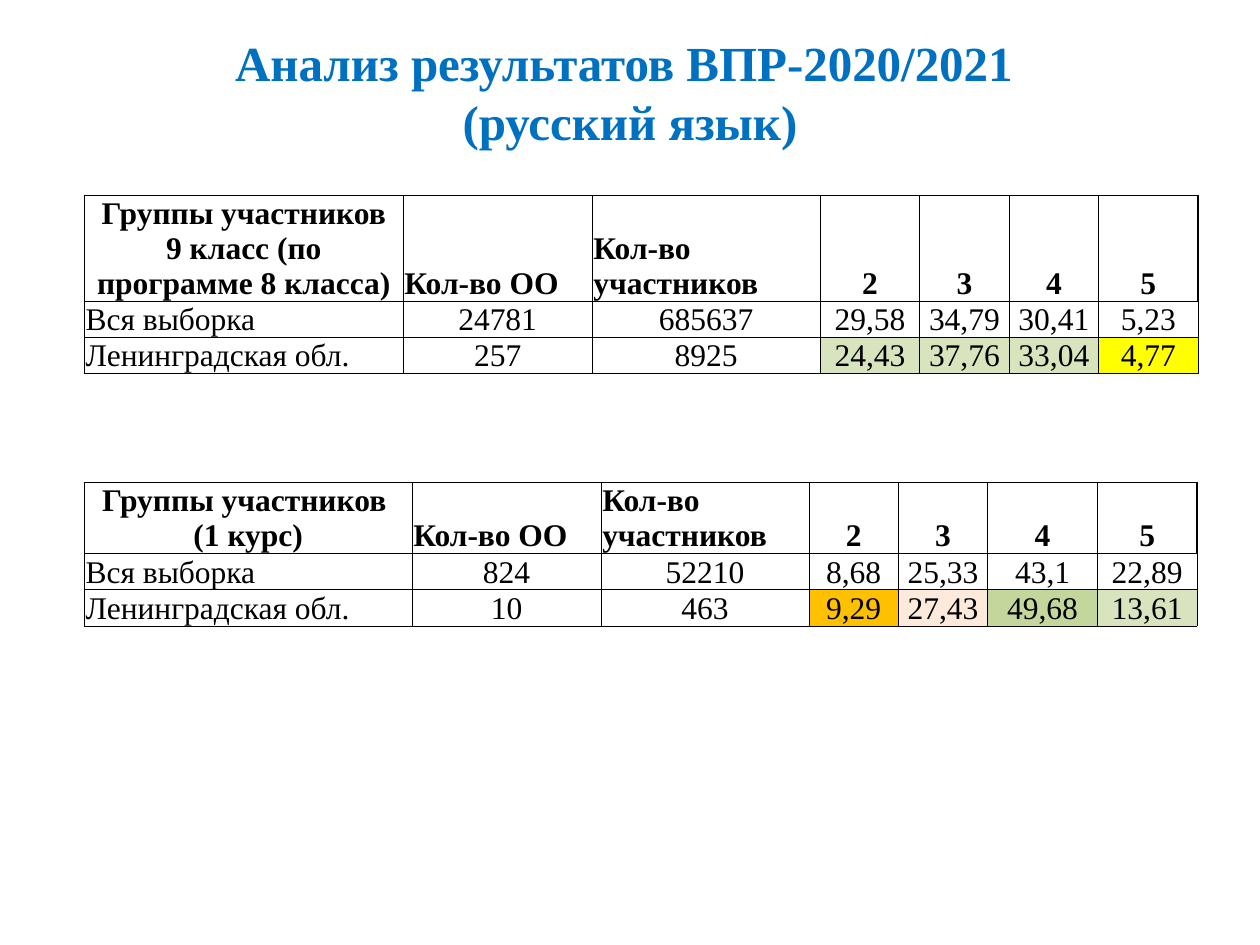
from dataclasses import dataclass, field

from lxml import etree
from pptx import Presentation
from pptx.dml.color import RGBColor
from pptx.enum import text
from pptx.oxml import ns
from pptx.util import Inches, Pt

FONT = "Times New Roman"
BLUE = RGBColor(0x00, 0x70, 0xC0)
BLACK = RGBColor(0x00, 0x00, 0x00)
ORANGE = RGBColor(0xFF, 0xC0, 0x00)
PEACH = RGBColor(0xFD, 0xEA, 0xDA)
GREEN = RGBColor(0xC3, 0xD6, 0x9B)
PALE_GREEN = RGBColor(0xD7, 0xE4, 0xBD)
YELLOW = RGBColor(0xFF, 0xFF, 0x00)

LEFT = 0.67
LINE_HEIGHT = 0.28
CENTER = text.PP_ALIGN.CENTER
HEADINGS = ["Кол-во ОО", "Кол-во участников", "2", "3", "4", "5"]


@dataclass
class ResultTable:
    top: float
    group: list[str]
    header_lines: int
    widths: list[float]
    sample: list[str]
    region: list[str]
    region_fills: list[RGBColor] = field(default_factory=list)


RESULTS = [
    ResultTable(
        top=3.83,
        group=["Группы участников ", "(1 курс)"],
        header_lines=2,
        widths=[2.6, 1.5, 1.65, 0.71, 0.71, 0.87, 0.79],
        sample=["824", "52210", "8,68", "25,33", "43,1", "22,89"],
        region=["10", "463", "9,29", "27,43", "49,68", "13,61"],
        region_fills=[ORANGE, PEACH, GREEN, PALE_GREEN],
    ),
    ResultTable(
        top=1.55,
        group=["Группы участников", "9 класс (по программе 8 класса)"],
        header_lines=3,
        widths=[2.53, 1.5, 1.81, 0.79, 0.71, 0.71, 0.79],
        sample=["24781", "685637", "29,58", "34,79", "30,41", "5,23"],
        region=["257", "8925", "24,43", "37,76", "33,04", "4,77"],
        region_fills=[PALE_GREEN, PALE_GREEN, PALE_GREEN, YELLOW],
    ),
]


def add_span(para, words: str, size: float, color: RGBColor, bold: bool) -> None:
    span = para.add_run()
    span.text = words
    span.font.name = FONT
    span.font.size = Pt(size)
    span.font.bold = bold
    span.font.color.rgb = color


def set_borders(cell, left: float = 0.5, right: float = 0.5) -> None:
    properties = cell._tc.get_or_add_tcPr()
    widths = {"a:lnL": left, "a:lnR": right, "a:lnT": 0.5, "a:lnB": 0.5}
    for position, (tag, width) in enumerate(widths.items()):
        line = etree.Element(ns.qn(tag), w=str(Pt(width)))
        fill = etree.SubElement(line, ns.qn("a:solidFill"))
        etree.SubElement(fill, ns.qn("a:srgbClr"), val=str(BLACK))
        properties.insert(position, line)


def fill_cell(cell, lines: list[str], bold: bool, centered: bool) -> None:
    cell.vertical_anchor = text.MSO_ANCHOR.BOTTOM
    cell.margin_left = cell.margin_right = cell.margin_top = Inches(0.01)
    cell.margin_bottom = 0
    cell.fill.background()
    frame = cell.text_frame
    for index, words in enumerate(lines):
        para = frame.add_paragraph() if index else frame.paragraphs[0]
        para.alignment = CENTER if centered else text.PP_ALIGN.LEFT
        add_span(para, words, 18, BLACK, bold)


def draw_results(page, results: ResultTable) -> None:
    rows = [
        [results.group] + [[heading] for heading in HEADINGS],
        [["Вся выборка"]] + [[value] for value in results.sample],
        [["Ленинградская обл."]] + [[value] for value in results.region],
    ]
    heights = [LINE_HEIGHT * results.header_lines, LINE_HEIGHT, LINE_HEIGHT]
    last = len(results.widths) - 1
    table = page.shapes.add_table(
        len(rows), len(results.widths), Inches(LEFT), Inches(results.top),
        Inches(sum(results.widths)), Inches(sum(heights)),
    ).table
    table.first_row = table.horz_banding = False
    for column, width in zip(table.columns, results.widths):
        column.width = Inches(width)
    for r, (row, height) in enumerate(zip(rows, heights)):
        table.rows[r].height = Inches(height)
        for c, lines in enumerate(row):
            header = r == 0
            centered = c not in (1, 2) if header else c > 0
            cell = table.cell(r, c)
            fill_cell(cell, lines, header, centered)
            set_borders(
                cell,
                left=1 if header and c == 0 else 0.5,
                right=1 if header and c == last else 0.5,
            )
    for c, color in enumerate(results.region_fills, start=3):
        fill = table.cell(2, c).fill
        fill.solid()
        fill.fore_color.rgb = color


def draw_title(page) -> None:
    box = page.shapes.title
    box.left, box.top = Inches(0.5), Inches(0.3)
    box.width, box.height = Inches(9), Inches(0.85)
    frame = box.text_frame
    frame.vertical_anchor = text.MSO_ANCHOR.MIDDLE
    para = frame.paragraphs[0]
    para.alignment = CENTER
    add_span(para, "Анализ результатов ВПР-2020/2021 ", 28, BLUE, True)
    para.add_line_break()
    add_span(para, "(русский язык)", 28, BLUE, True)


def main() -> None:
    deck = Presentation()
    deck.slide_width, deck.slide_height = Inches(10), Inches(7.5)
    page = deck.slides.add_slide(deck.slide_layouts[5])
    draw_title(page)
    for results in RESULTS:
        draw_results(page, results)
    deck.save("out.pptx")


if __name__ == "__main__":
    main()
